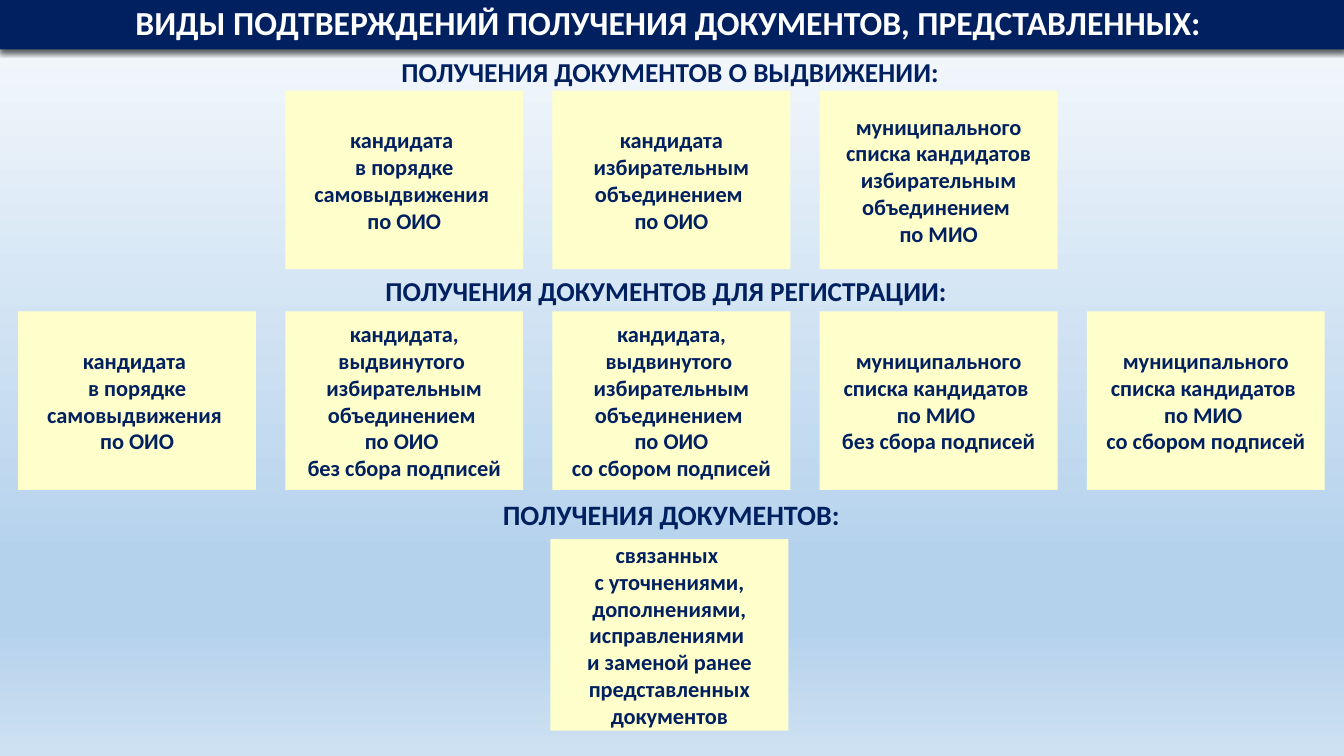
from lxml import etree
from pptx import Presentation
from pptx.dml.color import RGBColor
from pptx.enum import shapes, text
from pptx.oxml.ns import qn
from pptx.util import Inches, Pt

NAVY = RGBColor(0x00, 0x20, 0x60)
CREAM = RGBColor(0xFF, 0xFF, 0xCC)
WHITE = RGBColor(0xFF, 0xFF, 0xFF)
SKY = [(0, "F7FAFD"), (74, "B5D2EC"), (83, "B5D2EC"), (100, "CEE1F2")]

# Content: each item of a box is one paragraph
TITLE = "ВИДЫ ПОДТВЕРЖДЕНИЙ ПОЛУЧЕНИЯ ДОКУМЕНТОВ, ПРЕДСТАВЛЕННЫХ: "
SELF_NOMINEE = ["кандидата ", "в порядке самовыдвижения ", "по ОИО"]
PARTY_NOMINEE = ["кандидата, выдвинутого ", "избирательным объединением ", "по ОИО"]
PARTY_LIST = ["муниципального списка кандидатов ", "по МИО "]
NO_SIGNATURES = ["без сбора подписей"]
SIGNATURES = ["со сбором подписей"]

NOMINATION = [
    SELF_NOMINEE,
    ["кандидата избирательным объединением ", "по ОИО"],
    ["муниципального списка кандидатов избирательным объединением ", "по МИО"],
]
REGISTRATION = [
    SELF_NOMINEE,
    PARTY_NOMINEE[:-1] + ["по ОИО "] + NO_SIGNATURES,
    PARTY_NOMINEE + SIGNATURES,
    PARTY_LIST + NO_SIGNATURES,
    PARTY_LIST + SIGNATURES,
]
CHANGES = [["связанных ", "с уточнениями, дополнениями,", "исправлениями ",
            "и заменой ранее представленных документов"]]

# Heading, its left, top, size and line spacing; first box left, top, height; boxes
SECTIONS = [
    ("ПОЛУЧЕНИЯ ДОКУМЕНТОВ О ВЫДВИЖЕНИИ: ", 0.04, 0.53, 19.5, 0.9,
     2.83, 0.9, 1.77, NOMINATION),
    ("ПОЛУЧЕНИЯ ДОКУМЕНТОВ ДЛЯ РЕГИСТРАЦИИ: ", 0, 2.7, 19.5, 0.9,
     0.18, 3.09, 1.77, REGISTRATION),
    ("ПОЛУЧЕНИЯ ДОКУМЕНТОВ: ", 0.05, 4.9, 20, 1,
     5.46, 5.35, 1.9, CHANGES),
]
PAGE_WIDTH, PAGE_HEIGHT = 13.33, 7.5
HEADING_WIDTH, HEADING_HEIGHT = 13.28, 0.4
BOX_WIDTH, BOX_STEP = 2.36, 2.65


def write(box, lines, size, color=NAVY, spacing=1):
    frame = box.text_frame
    frame.word_wrap = True
    frame.vertical_anchor = text.MSO_ANCHOR.MIDDLE
    font_values = {"name": "Calibri", "size": Pt(size), "bold": True}
    for number, line in enumerate(lines):
        para = frame.add_paragraph() if number else frame.paragraphs[0]
        para.alignment = text.PP_ALIGN.CENTER
        para.line_spacing = spacing
        span = para.add_run()
        span.text = line
        for key, value in font_values.items():
            setattr(span.font, key, value)
        span.font.color.rgb = color


def add_block(page, place, fill):
    block = page.shapes.add_shape(shapes.MSO_SHAPE.RECTANGLE, *map(Inches, place))
    block.shadow.inherit = False
    block.fill.solid()
    block.fill.fore_color.rgb = fill
    block.line.fill.background()
    return block


def add_color(parent, value):
    return etree.SubElement(parent, qn("a:srgbClr"), val=value)


def paint_background(page):
    fill = page.background.fill
    fill.gradient()
    fill.gradient_angle = 270
    stops = next(page.element.iter(qn("a:gsLst")))
    for stop in list(stops):
        stops.remove(stop)
    for position, color in SKY:
        add_color(etree.SubElement(stops, qn("a:gs"), pos=str(position * 1000)), color)


def add_title(page):
    banner = add_block(page, (0, 0, PAGE_WIDTH, 0.49), NAVY)
    write(banner, [TITLE], 24, WHITE, 0.9)
    effects = next(banner.element.iter(qn("a:effectLst")))
    shadow = etree.SubElement(effects, qn("a:outerShdw"), blurRad=str(Pt(4.5)),
                              dist=str(Pt(1.5)), dir="5400000", rotWithShape="0")
    etree.SubElement(add_color(shadow, "000000"), qn("a:alpha"), val="63000")


def main():
    deck = Presentation()
    deck.slide_width, deck.slide_height = Inches(PAGE_WIDTH), Inches(PAGE_HEIGHT)
    page = deck.slides.add_slide(deck.slide_layouts[6])
    paint_background(page)
    add_title(page)

    # Headings with their rows of boxes
    for heading, left, top, size, spacing, row_left, row_top, height, boxes in SECTIONS:
        place = (left, top, HEADING_WIDTH, HEADING_HEIGHT)
        write(page.shapes.add_textbox(*map(Inches, place)), [heading], size,
              spacing=spacing)
        for column, lines in enumerate(boxes):
            place = (row_left + column * BOX_STEP, row_top, BOX_WIDTH, height)
            write(add_block(page, place, CREAM), lines, 16)

    deck.save("out.pptx")


if __name__ == "__main__":
    main()
